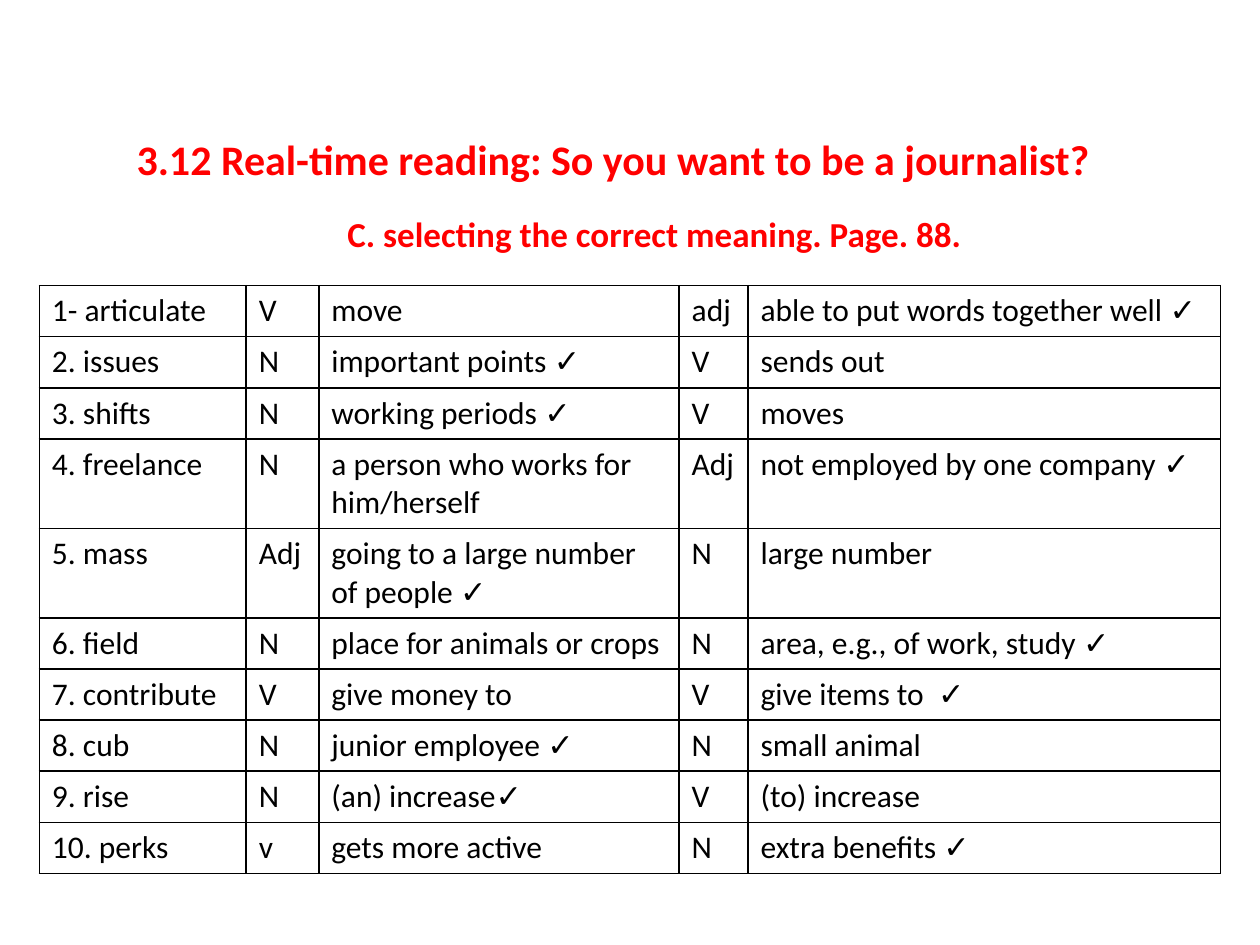
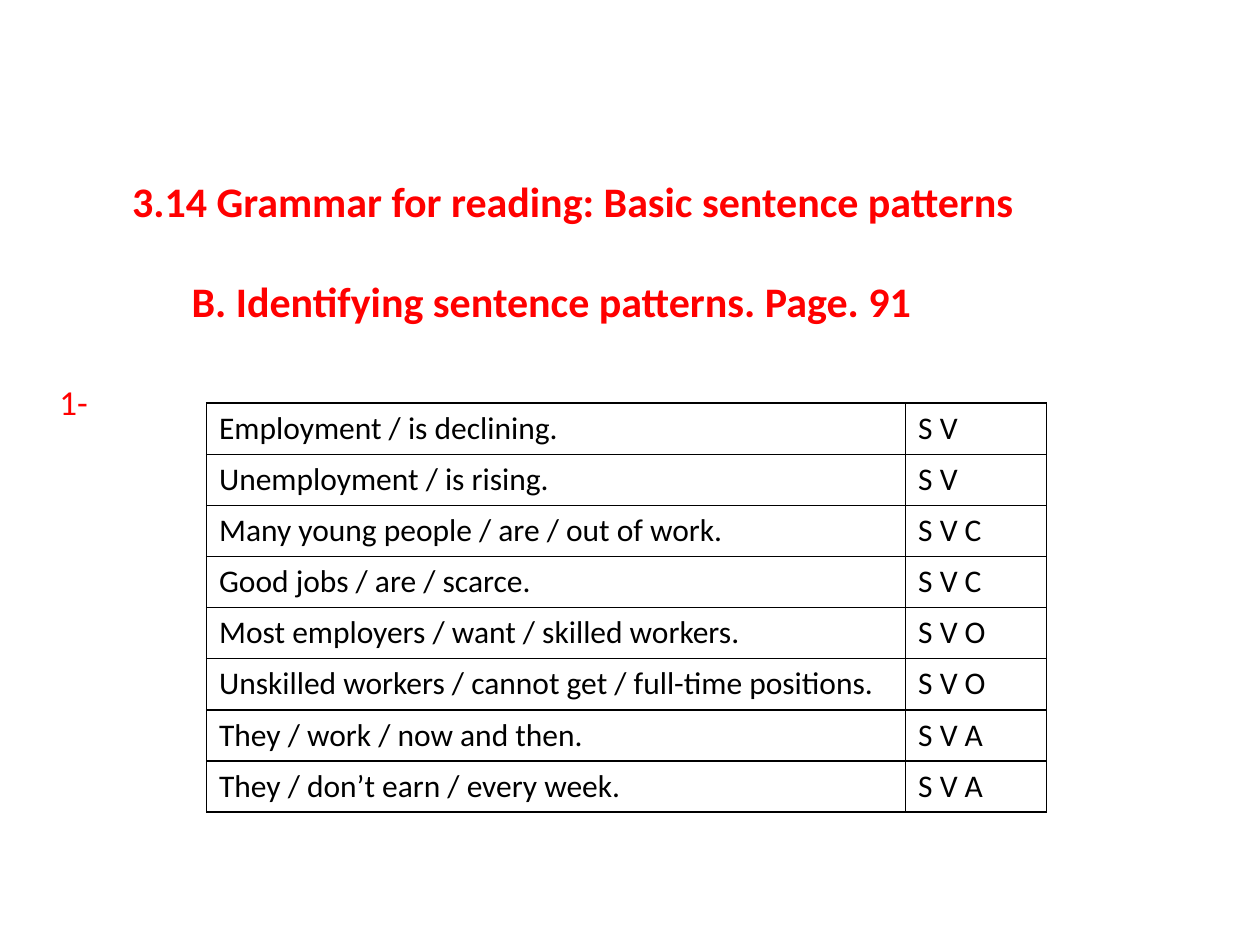
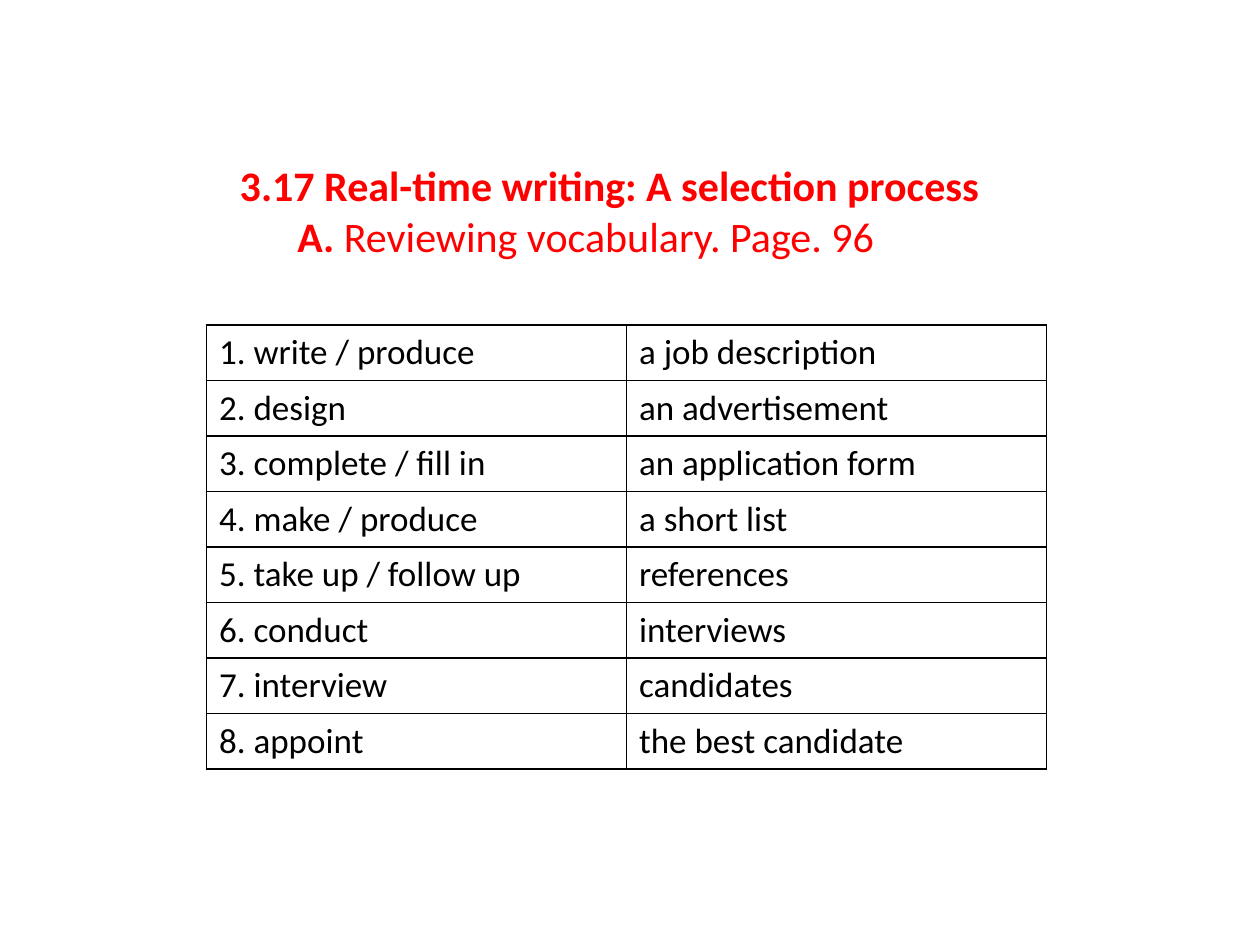
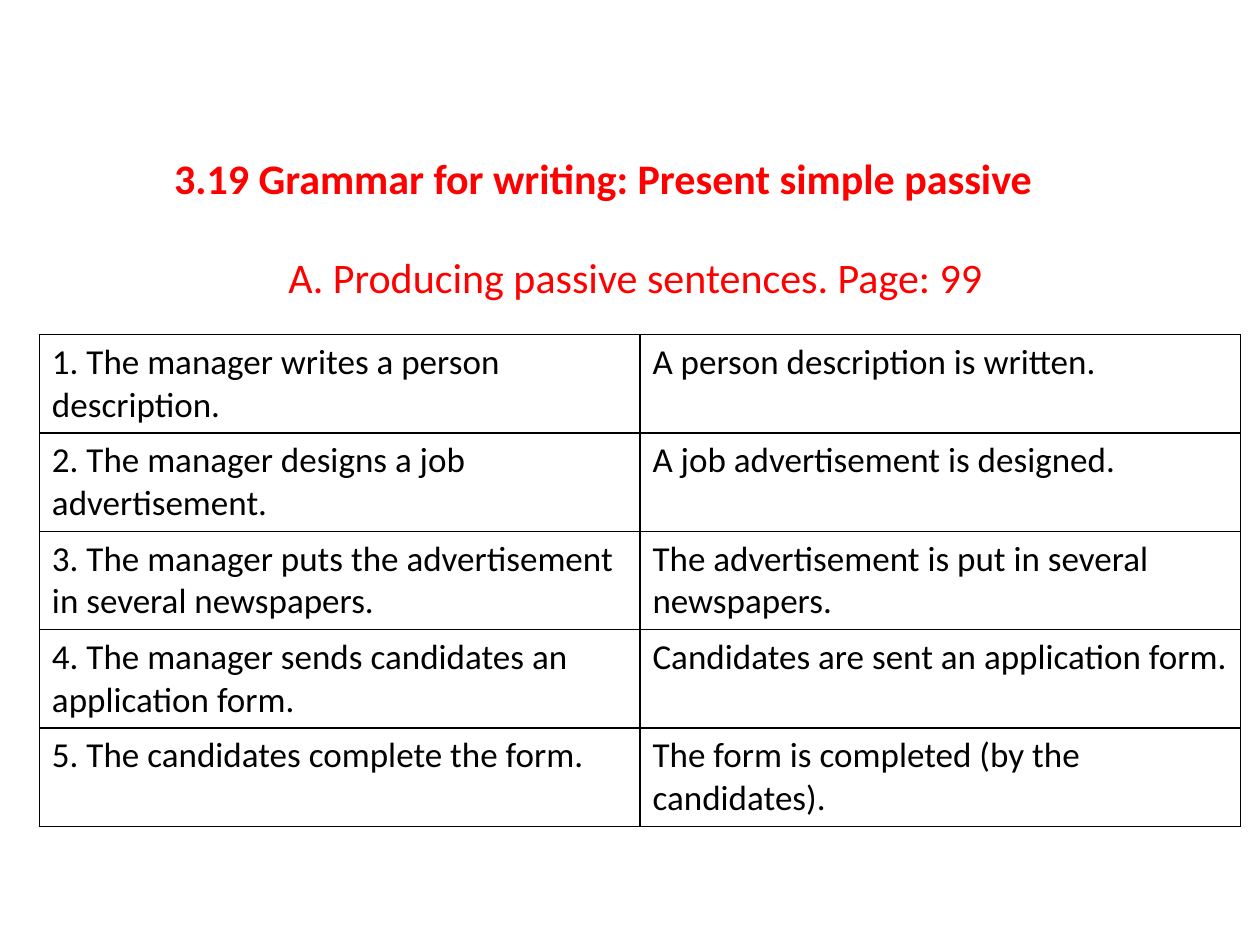
import lxml.etree
import pptx
import pptx.dml.color
import pptx.enum.text
import pptx.oxml.ns
import pptx.util

Pt = pptx.util.Pt
FONT = "Calibri"
RED, BLACK, WHITE = "FF0000", "000000", "FFFFFF"
SLIDE_WIDTH, SLIDE_HEIGHT = 720, 540
ROW_HEIGHT = 29.2
LINE_HEIGHT = 1.22  # line height of the font, as a share of its size

# Heading lines: (left, top, size, [(text, bold), ...])
LESSONS = [
    {
        "heading": [
            (78, 76, 24, [("3.12 Real-time reading: So you want to be a journalist?", True)]),
            (198.5, 122, 20, [("C. selecting the correct meaning. Page. 88.", True)]),
        ],
        "left": 22.5, "top": 163.2, "size": 18,
        "columns": [118.2, 41.5, 205.9, 39.4, 270],
        "rows": [
            ("1- articulate", "V", "move", "adj", "able to put words together well ✓"),
            ("2. issues", "N", "important points ✓", "V", "sends out"),
            ("3. shifts", "N", "working periods ✓", "V", "moves"),
            ("4. freelance", "N", "a person who works for him/herself", "Adj",
             "not employed by one company ✓"),
            ("5. mass", "Adj", "going to a large number of people ✓", "N", "large number"),
            ("6. field", "N", "place for animals or crops", "N", "area, e.g., of work, study ✓"),
            ("7. contribute", "V", "give money to", "V", "give items to  ✓"),
            ("8. cub", "N", "junior employee ✓", "N", "small animal"),
            ("9. rise", "N", "(an) increase✓", "V", "(to) increase"),
            ("10. perks", "v", "gets more active", "N", "extra benefits ✓"),
        ],
    },
    {
        "heading": [
            (75.5, 100, 24, [("3.14 Grammar for reading: Basic sentence patterns", True)]),
            (109.5, 157.7, 24, [("B. Identifying sentence patterns. Page. 91", True)]),
            (34, 218.7, 20, [("1-", False)]),
        ],
        "left": 118, "top": 230.4, "size": 18,
        "columns": [399.5, 80.6],
        "rows": [
            ("Employment / is declining.", "S V"),
            ("Unemployment / is rising.", "S V"),
            ("Many young people / are / out of work.", "S V C"),
            ("Good jobs / are / scarce.", "S V C"),
            ("Most employers / want / skilled workers.", "S V O"),
            ("Unskilled workers / cannot get / full-time positions.", "S V O"),
            ("They / work / now and then.", "S V A"),
            ("They / don’t earn / every week.", "S V A"),
        ],
    },
    {
        "heading": [
            (137, 91.4, 24, [("3.17 Real-time writing: A selection process", True)]),
            (170, 120.7, 24, [("A. ", True), ("Reviewing vocabulary. Page. 96", False)]),
        ],
        "left": 118, "top": 185.6, "size": 20,
        "columns": [240, 240],
        "rows": [
            ("1. write / produce", "a job description"),
            ("2. design", "an advertisement"),
            ("3. complete / fill in", "an application form"),
            ("4. make / produce", "a short list"),
            ("5. take up / follow up", "references"),
            ("6. conduct", "interviews"),
            ("7. interview", "candidates"),
            ("8. appoint", "the best candidate"),
        ],
    },
    {
        "heading": [
            (99.5, 87, 24, [("3.19 Grammar for writing: Present simple passive", True)]),
            (164.8, 144, 24, [("A. Producing passive sentences. Page: 99", False)]),
        ],
        "left": 22.5, "top": 191.2, "size": 20,
        "columns": [343.2, 343.2],
        "rows": [
            ("1. The manager writes a person description.", "A person description is written."),
            ("2. The manager designs a job advertisement.", "A job advertisement is designed."),
            ("3. The manager puts the advertisement in several newspapers.",
             "The advertisement is put in several newspapers."),
            ("4. The manager sends candidates an application form.",
             "Candidates are sent an application form."),
            ("5. The candidates complete the form.", "The form is completed (by the candidates)."),
        ],
    },
]


def color(value):
    return pptx.dml.color.RGBColor.from_string(value)


def add_run(paragraph, text, size, ink, bold=False):
    run = paragraph.add_run()
    run.text = text
    run.font.name = FONT
    run.font.size = Pt(size)
    run.font.bold = bold
    run.font.color.rgb = color(ink)


def fill_heading(title, lines):
    """Set each heading line at its own indent; gaps come from paragraph spacing."""
    title.left = title.top = 0
    title.width, title.height = Pt(SLIDE_WIDTH), Pt(SLIDE_HEIGHT)
    frame = title.text_frame
    frame.auto_size = pptx.enum.text.MSO_AUTO_SIZE.NONE
    frame.word_wrap = True
    frame.vertical_anchor = pptx.enum.text.MSO_ANCHOR.TOP
    frame.margin_left = frame.margin_right = 0
    bottom = lines[0][1]
    frame.margin_top = Pt(bottom)
    for index, (left, top, size, runs) in enumerate(lines):
        paragraph = frame.add_paragraph() if index else frame.paragraphs[0]
        paragraph.alignment = pptx.enum.text.PP_ALIGN.LEFT
        paragraph.line_spacing = 1.0
        paragraph.space_before = Pt(max(0, round(top - bottom, 1)))
        paragraph._p.get_or_add_pPr().set("marL", str(Pt(left)))
        for text, bold in runs:
            add_run(paragraph, text, size, RED, bold)
        bottom = top + size * LINE_HEIGHT


def add_borders(cell):
    qn = pptx.oxml.ns.qn
    properties = cell._tc.get_or_add_tcPr()
    for side in ("a:lnL", "a:lnR", "a:lnT", "a:lnB"):
        line = lxml.etree.SubElement(properties, qn(side), w=str(Pt(1)))
        fill = lxml.etree.SubElement(line, qn("a:solidFill"))
        lxml.etree.SubElement(fill, qn("a:srgbClr"), val=BLACK)


def add_answers(slide, lesson):
    rows, columns = lesson["rows"], lesson["columns"]
    answers = slide.shapes.add_table(
        len(rows), len(columns), Pt(lesson["left"]), Pt(lesson["top"]),
        Pt(sum(columns)), Pt(ROW_HEIGHT * len(rows))).table
    answers.first_row = answers.horz_banding = False
    for column, width in zip(answers.columns, columns):
        column.width = Pt(width)
    for row, texts in zip(answers.rows, rows):
        row.height = Pt(ROW_HEIGHT)
        for cell, text in zip(row.cells, texts):
            add_borders(cell)
            cell.fill.solid()
            cell.fill.fore_color.rgb = color(WHITE)
            add_run(cell.text_frame.paragraphs[0], text, lesson["size"], BLACK)


def main():
    deck = pptx.Presentation()
    deck.slide_width, deck.slide_height = Pt(SLIDE_WIDTH), Pt(SLIDE_HEIGHT)
    for lesson in LESSONS:
        slide = deck.slides.add_slide(deck.slide_layouts[0])
        subtitle = slide.placeholders[1].element
        subtitle.getparent().remove(subtitle)
        fill_heading(slide.shapes.title, lesson["heading"])
        add_answers(slide, lesson)
    deck.save("out.pptx")


if __name__ == "__main__":
    main()
